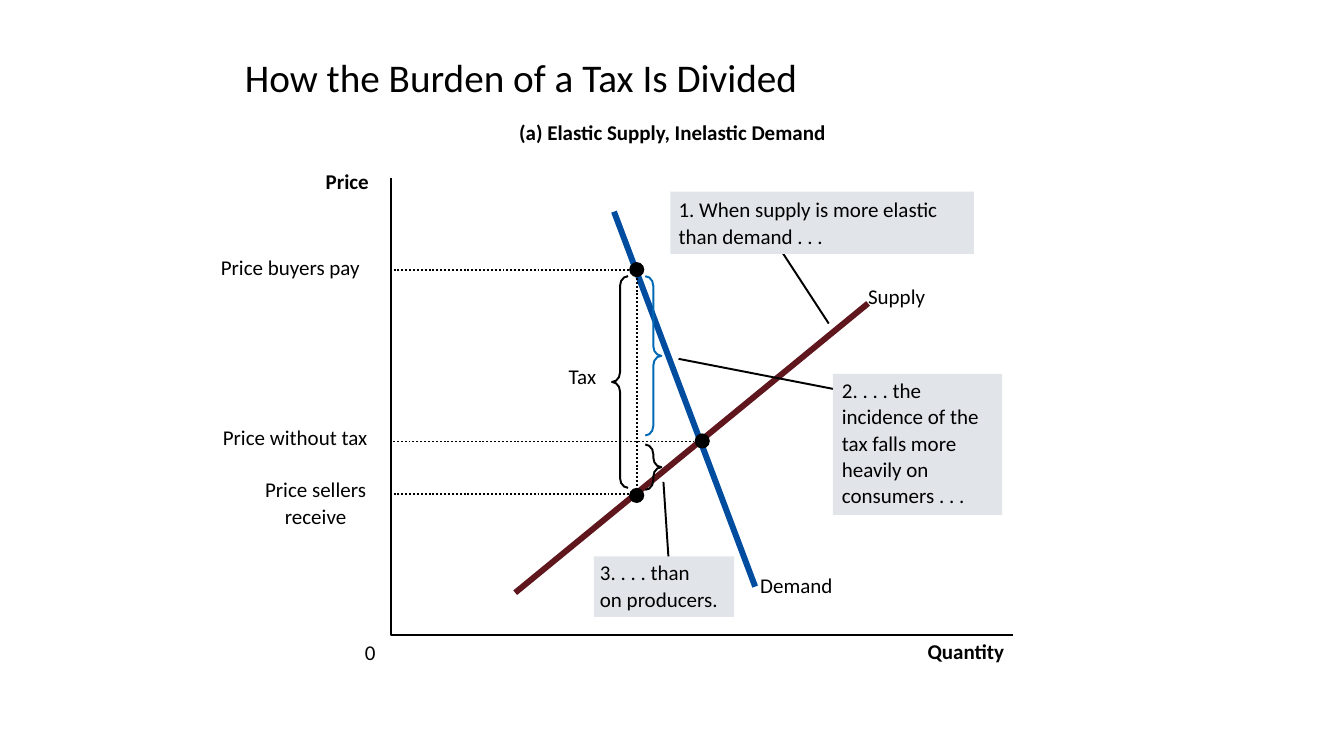
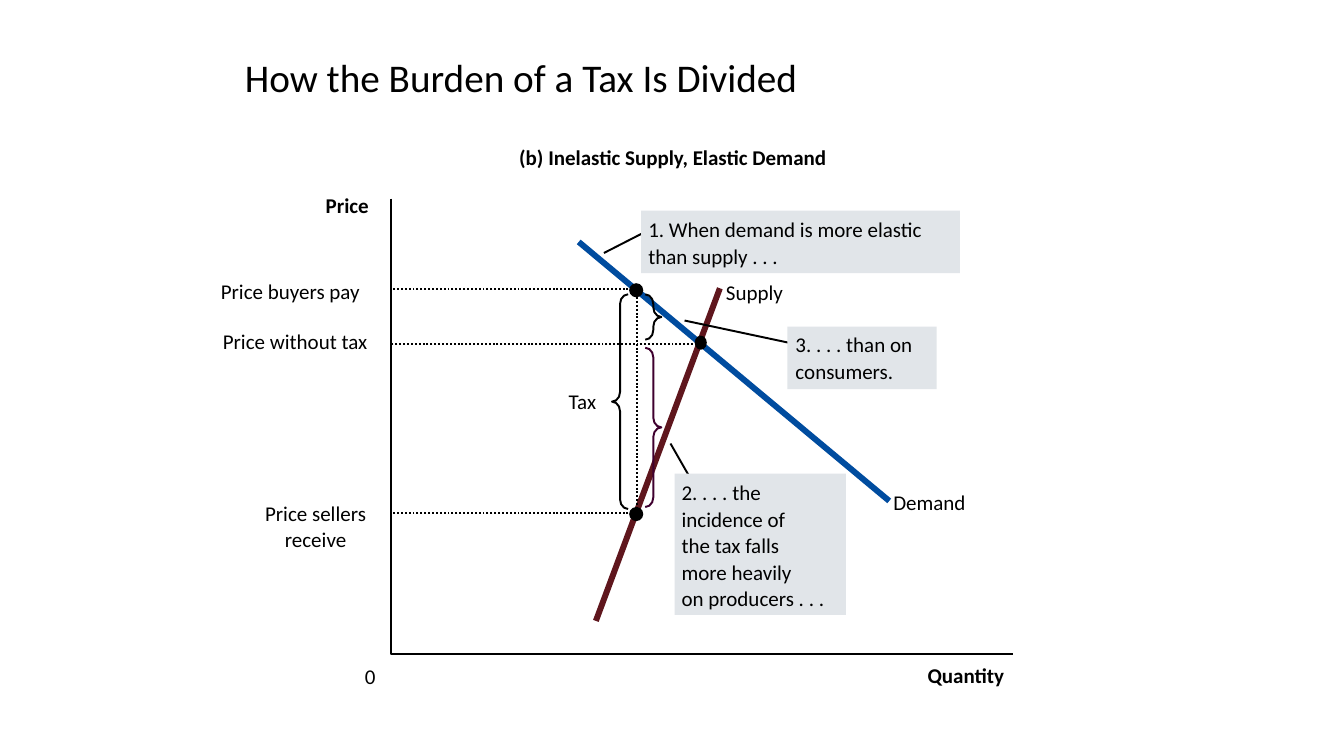
from dataclasses import dataclass
from typing import NamedTuple

from lxml import etree
from pptx import Presentation
from pptx.dml.color import RGBColor
from pptx.enum import dml, shapes, text
from pptx.oxml import ns
from pptx.slide import Slide, SlideLayout
from pptx.util import Inches, Pt


@dataclass(frozen=True)
class Theme:
    font: str = "Calibri"
    title_size: float = 28
    body_size: float = 15
    line_pitch: float = 18.9
    thin: float = 1.38
    thick: float = 4.25
    ink: RGBColor = RGBColor(0x00, 0x00, 0x00)
    demand: RGBColor = RGBColor(0x00, 0x4C, 0x9F)
    supply: RGBColor = RGBColor(0x5F, 0x16, 0x1D)
    consumers: RGBColor = RGBColor(0x00, 0x69, 0xB5)
    producers: RGBColor = RGBColor(0x3F, 0x00, 0x2F)
    callout: RGBColor = RGBColor(0xE1, 0xE5, 0xE9)


THEME = Theme()
TITLE = "How the Burden of a Tax Is Divided"
AXIS_X, AXIS_END = 3.88, 10.05
TAX_X = 6.32
LABEL_HEIGHT = 0.25
BRACE_WIDTH = 0.16


class Point(NamedTuple):
    x: float
    y: float


class Box(NamedTuple):
    left: float
    top: float
    width: float
    height: float


@dataclass(frozen=True)
class Label:
    lines: tuple[str, ...]
    left: float
    top: float
    width: float
    bold: bool = False


@dataclass(frozen=True)
class Curve:
    start: Point
    end: Point
    color: RGBColor
    label: Label


@dataclass(frozen=True)
class PriceLevel:
    label: Label
    y: float
    dot: Box


@dataclass(frozen=True)
class Brace:
    top: float
    bottom: float
    color: RGBColor = THEME.ink


@dataclass(frozen=True)
class Callout:
    lines: tuple[str, ...]
    box: Box
    leader: tuple[Point, Point]
    inset: Point = Point(0.07, 0.05)


@dataclass(frozen=True)
class Market:
    heading: str
    axis_top: float
    axis_bottom: float
    label_shift: float
    curves: tuple[Curve, ...]
    levels: tuple[PriceLevel, ...]
    tax: Brace
    shares: tuple[Brace, ...]
    callouts: tuple[Callout, ...]


def demand(start: Point, end: Point, left: float, top: float) -> Curve:
    return Curve(start, end, THEME.demand, Label(("Demand",), left, top, 0.72))


def supply(start: Point, end: Point, left: float, top: float) -> Curve:
    return Curve(start, end, THEME.supply, Label(("Supply",), left, top, 0.57))


def buyers(top: float, y: float, dot: Box) -> PriceLevel:
    return PriceLevel(Label(("Price buyers pay",), 2.19, top, 1.39), y, dot)


def untaxed(top: float, y: float, dot: Box) -> PriceLevel:
    return PriceLevel(Label(("Price without tax",), 2.21, top, 1.45), y, dot)


def sellers(top: float, y: float, dot: Box) -> PriceLevel:
    return PriceLevel(Label(("Price sellers", "receive"), 2.62, top, 1.02), y, dot)


MARKETS = (
    Market(
        "(a) Elastic Supply, Inelastic Demand", 1.77, 6.3, 0,
        curves=(
            demand(Point(7.49, 5.82), Point(6.09, 2.1), 7.54, 5.68),
            supply(Point(5.11, 5.88), Point(8.61, 3.01), 8.61, 2.81),
        ),
        levels=(
            sellers(4.72, 4.9, Box(6.24, 4.84, 0.15, 0.15)),
            buyers(2.52, 2.68, Box(6.24, 2.6, 0.15, 0.15)),
            untaxed(4.21, 4.38, Box(6.89, 4.3, 0.15, 0.15)),
        ),
        tax=Brace(2.74, 4.84),
        shares=(Brace(2.74, 4.32, THEME.consumers), Brace(4.41, 4.86)),
        callouts=(
            Callout(("2. . . . the", "incidence of the", "tax falls more",
                     "heavily on", "consumers . . ."),
                    Box(8.26, 3.71, 1.68, 1.4),
                    (Point(6.73, 3.56), Point(8.53, 3.91)), Point(0.09, 0.02)),
            Callout(("1. When supply is more elastic", "than demand . . ."),
                    Box(6.65, 1.9, 3.01, 0.62),
                    (Point(8.22, 3.21), Point(7.75, 2.49)), Point(0.08, 0.04)),
            Callout(("3. . . . than", "on producers."),
                    Box(5.89, 5.52, 1.39, 0.6),
                    (Point(6.58, 4.78), Point(6.64, 5.68)), Point(0.06, 0.02)),
        ),
    ),
    Market(
        "(b) Inelastic Supply, Elastic Demand", 1.97, 6.49, 0.24,
        curves=(
            demand(Point(5.74, 2.4), Point(8.82, 4.97), 8.86, 4.86),
            supply(Point(7.14, 2.86), Point(5.91, 6.16), 7.2, 2.77),
        ),
        levels=(
            sellers(4.95, 5.09, Box(6.24, 5.03, 0.14, 0.14)),
            buyers(2.76, 2.87, Box(6.24, 2.81, 0.14, 0.14)),
            untaxed(3.26, 3.41, Box(6.89, 3.33, 0.12, 0.14)),
        ),
        tax=Brace(2.92, 5.05),
        shares=(Brace(2.92, 3.37), Brace(3.45, 5.03, THEME.producers)),
        callouts=(
            Callout(("3. . . . than on", "consumers."),
                    Box(7.81, 3.24, 1.48, 0.62),
                    (Point(6.79, 3.18), Point(7.87, 3.41)), Point(0.08, 0.04)),
            Callout(("1. When demand is more elastic", "than supply . . ."),
                    Box(6.36, 2.09, 3.16, 0.62),
                    (Point(5.99, 2.51), Point(6.4, 2.3))),
            Callout(("2. . . . the", "incidence of", "the tax falls",
                     "more heavily", "on producers . . ."),
                    Box(6.69, 4.7, 1.7, 1.4),
                    (Point(6.65, 4.4), Point(6.93, 4.89))),
        ),
    ),
)


def inches(values: tuple[float, ...]) -> list[int]:
    return [Inches(value) for value in values]


def write(paragraph, lines: tuple[str, ...], size: float, bold: bool = False) -> None:
    """Fill one paragraph, with a line break between the lines."""
    for index, line in enumerate(lines):
        if index:
            paragraph.add_line_break()
        run = paragraph.add_run()
        run.text = line
        run.font.name = THEME.font
        run.font.size = Pt(size)
        run.font.bold = bold
        run.font.color.rgb = THEME.ink


def set_insets(frame, left: float = 0, top: float = 0) -> None:
    frame.margin_left, frame.margin_top = Inches(left), Inches(top)
    frame.margin_right = frame.margin_bottom = 0
    frame.word_wrap = False


def add_label(slide: Slide, label: Label) -> None:
    height = LABEL_HEIGHT * len(label.lines)
    box = slide.shapes.add_textbox(*inches((label.left, label.top, label.width, height)))
    frame = box.text_frame
    set_insets(frame)
    frame.auto_size = text.MSO_AUTO_SIZE.SHAPE_TO_FIT_TEXT
    paragraph = frame.paragraphs[0]
    if len(label.lines) > 1:
        paragraph.alignment = text.PP_ALIGN.CENTER
        paragraph.line_spacing = Pt(THEME.line_pitch)
    write(paragraph, label.lines, THEME.body_size, label.bold)


def add_line(slide: Slide, start: Point, end: Point, color: RGBColor = THEME.ink,
             width: float = THEME.thin, dotted: bool = False) -> None:
    connector = slide.shapes.add_connector(
        shapes.MSO_CONNECTOR.STRAIGHT, *inches((*start, *end)))
    connector.line.color.rgb = color
    connector.line.width = Pt(width)
    if dotted:
        connector.line.dash_style = dml.MSO_LINE.ROUND_DOT
    etree.SubElement(connector._element.spPr, ns.qn("a:effectLst"))


def add_filled(slide: Slide, kind: shapes.MSO_SHAPE, box: Box, color: RGBColor):
    shape = slide.shapes.add_shape(kind, *inches(box))
    shape.shadow.inherit = False
    shape.fill.solid()
    shape.fill.fore_color.rgb = color
    shape.line.fill.background()
    return shape


def outline(shape, color: RGBColor = THEME.ink) -> None:
    shape.shadow.inherit = False
    shape.fill.background()
    shape.line.color.rgb = color
    shape.line.width = Pt(THEME.thin)


def add_brace(slide: Slide, kind: shapes.MSO_SHAPE, left: float, brace: Brace) -> None:
    shape = slide.shapes.add_shape(
        kind, *inches((left, brace.top, BRACE_WIDTH, brace.bottom - brace.top)))
    shape.adjustments[0] = 0.6
    outline(shape, brace.color)


def add_axes(slide: Slide, market: Market) -> None:
    builder = slide.shapes.build_freeform(Inches(AXIS_X), Inches(market.axis_top))
    corner, end = (AXIS_X, market.axis_bottom), (AXIS_END, market.axis_bottom)
    builder.add_line_segments([inches(corner), inches(end)], close=False)
    outline(builder.convert_to_shape())
    shift = market.label_shift
    for label in (
        Label(("Quantity",), 9.2, 6.33 + shift, 0.77, bold=True),
        Label(("0",), 3.62, 6.34 + shift, 0.11),
        Label(("Price",), 3.23, 1.67 + shift, 0.43, bold=True),
        Label((market.heading,), 5.15, 1.19 + shift, 3.06, bold=True),
        Label(("Tax",), 5.64, 3.61 + shift, 0.35),
    ):
        add_label(slide, label)


def add_price_level(slide: Slide, level: PriceLevel) -> None:
    dot = level.dot
    add_line(slide, Point(dot.left + dot.width / 2, level.y), Point(AXIS_X, level.y),
             dotted=True)
    add_filled(slide, shapes.MSO_SHAPE.OVAL, dot, THEME.ink)
    add_label(slide, level.label)


def add_callout(slide: Slide, callout: Callout) -> None:
    add_line(slide, *callout.leader)
    panel = add_filled(slide, shapes.MSO_SHAPE.RECTANGLE, callout.box, THEME.callout)
    frame = panel.text_frame
    set_insets(frame, *callout.inset)
    frame.vertical_anchor = text.MSO_ANCHOR.TOP
    paragraph = frame.paragraphs[0]
    paragraph.alignment = text.PP_ALIGN.LEFT
    paragraph.line_spacing = Pt(THEME.line_pitch)
    write(paragraph, callout.lines, THEME.body_size)


def add_title(slide: Slide) -> None:
    frame = slide.shapes.title.text_frame
    frame.vertical_anchor = text.MSO_ANCHOR.MIDDLE
    paragraph = frame.paragraphs[0]
    paragraph.alignment = text.PP_ALIGN.LEFT
    paragraph.line_spacing = 0.8
    write(paragraph, (TITLE,), THEME.title_size)


def add_market(slide: Slide, market: Market) -> None:
    add_title(slide)
    add_axes(slide, market)
    for curve in market.curves:
        add_line(slide, curve.start, curve.end, curve.color, THEME.thick)
        add_label(slide, curve.label)
    seller, buyer, _ = market.levels
    add_line(slide, Point(TAX_X, buyer.y), Point(TAX_X, seller.y), dotted=True)
    add_brace(slide, shapes.MSO_SHAPE.LEFT_BRACE, 6.07, market.tax)
    for share in market.shares:
        add_brace(slide, shapes.MSO_SHAPE.RIGHT_BRACE, 6.4, share)
    for callout in market.callouts:
        add_callout(slide, callout)
    for level in market.levels:
        add_price_level(slide, level)


def place_title(layout: SlideLayout) -> None:
    title = layout.placeholders[0]
    title.left, title.top, title.width, title.height = inches((2.33, 0.46, 8.84, 0.7))


def main() -> None:
    deck = Presentation()
    deck.slide_width, deck.slide_height = Inches(13.33), Inches(7.5)
    layout = deck.slide_layouts.get_by_name("Title Only")
    place_title(layout)
    for market in MARKETS:
        add_market(deck.slides.add_slide(layout), market)
    deck.save("out.pptx")


if __name__ == "__main__":
    main()
